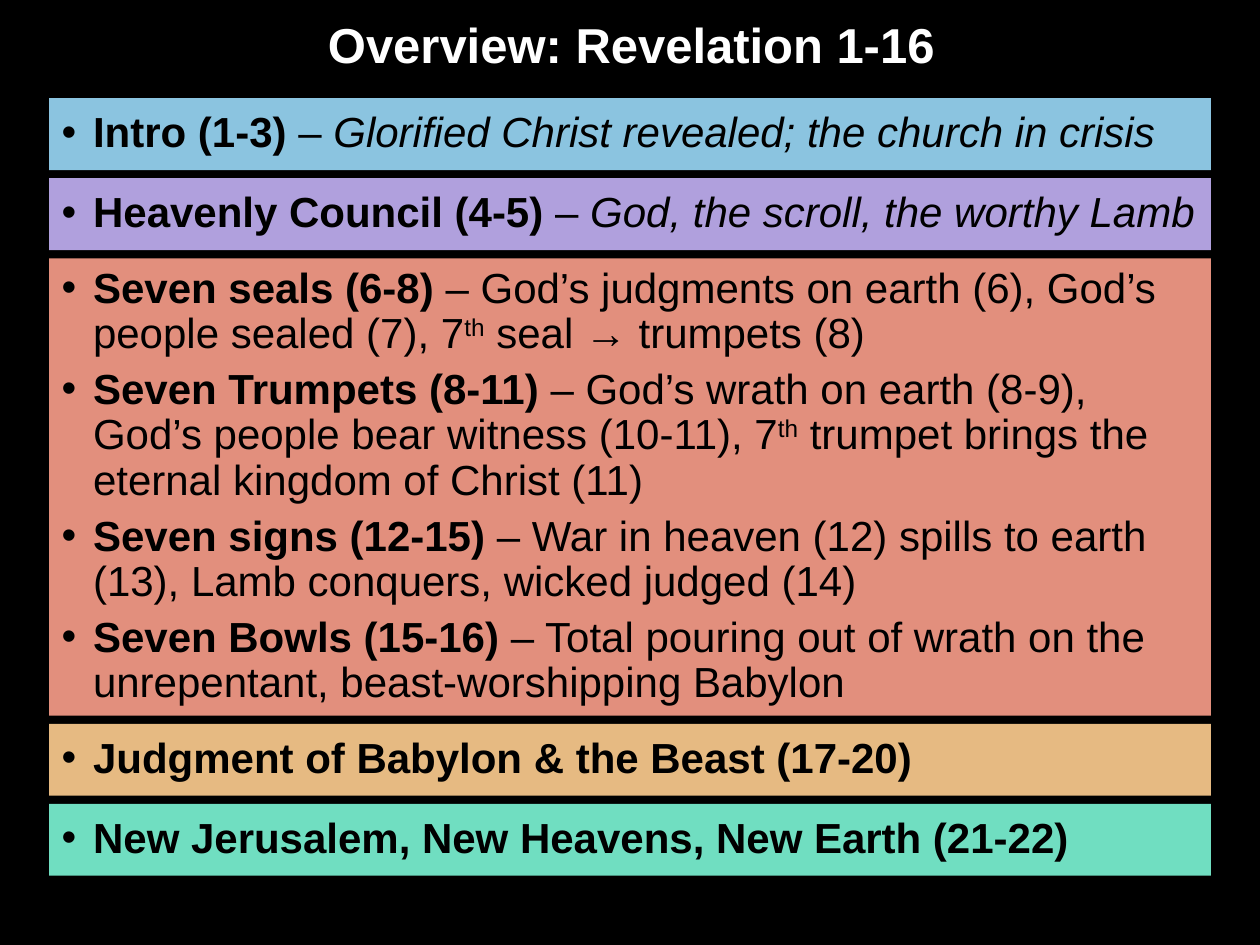
from lxml.etree import SubElement
from pptx import Presentation
from pptx.dml.color import RGBColor
from pptx.enum.shapes import MSO_SHAPE as Shape
from pptx.enum.text import MSO_ANCHOR as Anchor, PP_ALIGN as Align
from pptx.oxml.ns import qn
from pptx.util import Inches, Pt

BLACK = RGBColor(0x00, 0x00, 0x00)
WHITE = RGBColor(0xFF, 0xFF, 0xFF)
BLUE = RGBColor(0x8B, 0xC4, 0xE0)
PURPLE = RGBColor(0xB0, 0xA0, 0xDD)
CORAL = RGBColor(0xE2, 0x8F, 0x7D)
SAND = RGBColor(0xE6, 0xBA, 0x82)
MINT = RGBColor(0x70, 0xDE, 0xC1)

BAND_LEFT, BAND_TOP, BAND_WIDTH = Inches(0.39), Inches(0.78), Inches(9.22)
SHORT, TALL = Inches(0.57), Inches(3.63)
GAP = Inches(0.13) // 2

BOLD, PLAIN, ITALIC, SUPER = "bold", "plain", "italic", "super"

SECTIONS = [
    (BLUE, SHORT, [
        [("Intro (1-3) ", BOLD), ("– ", PLAIN),
         ("Glorified Christ revealed; the church in crisis", ITALIC)],
    ]),
    (PURPLE, SHORT, [
        [("Heavenly Council (4-5) ", BOLD), ("– ", PLAIN),
         ("God, the scroll, the worthy Lamb", ITALIC)],
    ]),
    (CORAL, TALL, [
        [("Seven seals (6-8) ", BOLD),
         ("– God’s judgments on earth (6), God’s people sealed (7), 7", PLAIN),
         ("th", SUPER), (" seal → trumpets (8)", PLAIN)],
        [("Seven Trumpets (8-11) ", BOLD),
         ("– God’s wrath on earth (8-9), God’s people bear witness (10-11), 7", PLAIN),
         ("th", SUPER), (" trumpet brings the eternal kingdom of Christ (11)", PLAIN)],
        [("Seven signs (12-15) ", BOLD),
         ("– War in heaven (12) spills to earth (13), Lamb conquers, wicked judged (14)", PLAIN)],
        [("Seven Bowls (15-16) ", BOLD),
         ("– Total pouring out of wrath on the unrepentant, beast-worshipping Babylon", PLAIN)],
    ]),
    (SAND, SHORT, [[("Judgment of Babylon & the Beast (17-20)", BOLD)]]),
    (MINT, SHORT, [[("New Jerusalem, New Heavens, New Earth (21-22)", BOLD)]]),
]


def add_bullet(paragraph):
    properties = paragraph._p.get_or_add_pPr()
    properties.set("marL", str(Inches(0.25)))
    properties.set("indent", str(-Inches(0.25)))
    SubElement(properties, qn("a:buFont")).set("typeface", "Arial")
    SubElement(properties, qn("a:buChar")).set("char", "•")


def write_text(frame, paragraphs, size=24, color=BLACK, align=Align.LEFT,
               space_after=0, bullet=True):
    frame.word_wrap = True
    frame.vertical_anchor = Anchor.MIDDLE
    for index, pieces in enumerate(paragraphs):
        paragraph = frame.add_paragraph() if index else frame.paragraphs[0]
        paragraph.alignment = align
        paragraph.line_spacing = 0.9
        paragraph.space_before = Pt(0)
        paragraph.space_after = Pt(space_after)
        if bullet:
            add_bullet(paragraph)
        for text, style in pieces:
            run = paragraph.add_run()
            run.text = text
            run.font.name = "Arial"
            run.font.size = Pt(size)
            run.font.color.rgb = color
            run.font.bold = style == BOLD
            run.font.italic = style == ITALIC
            if style == SUPER:
                run._r.get_or_add_rPr().set("baseline", "30000")


def add_title(slide, text):
    title = slide.shapes.title
    title.left, title.top = Inches(0.7), Inches(0.09)
    title.width, title.height = Inches(8.62), Inches(0.57)
    write_text(title.text_frame, [[(text, BOLD)]], size=28, color=WHITE,
               align=Align.CENTER, bullet=False)


def add_band(slide, top, height, color, paragraphs):
    band = slide.shapes.add_shape(Shape.RECTANGLE, BAND_LEFT, top, BAND_WIDTH, height)
    band.shadow.inherit = False
    band.fill.solid()
    band.fill.fore_color.rgb = color
    band.line.fill.background()
    write_text(band.text_frame, paragraphs, space_after=6 if len(paragraphs) > 1 else 0)


def main():
    deck = Presentation()
    deck.slide_width, deck.slide_height = Inches(10), Inches(7.5)
    slide = deck.slides.add_slide(deck.slide_layouts[5])
    slide.background.fill.solid()
    slide.background.fill.fore_color.rgb = BLACK
    add_title(slide, "Overview: Revelation 1-16")
    top = BAND_TOP
    for color, height, paragraphs in SECTIONS:
        add_band(slide, top, height, color, paragraphs)
        top += height + GAP
    deck.save("out.pptx")


if __name__ == "__main__":
    main()
